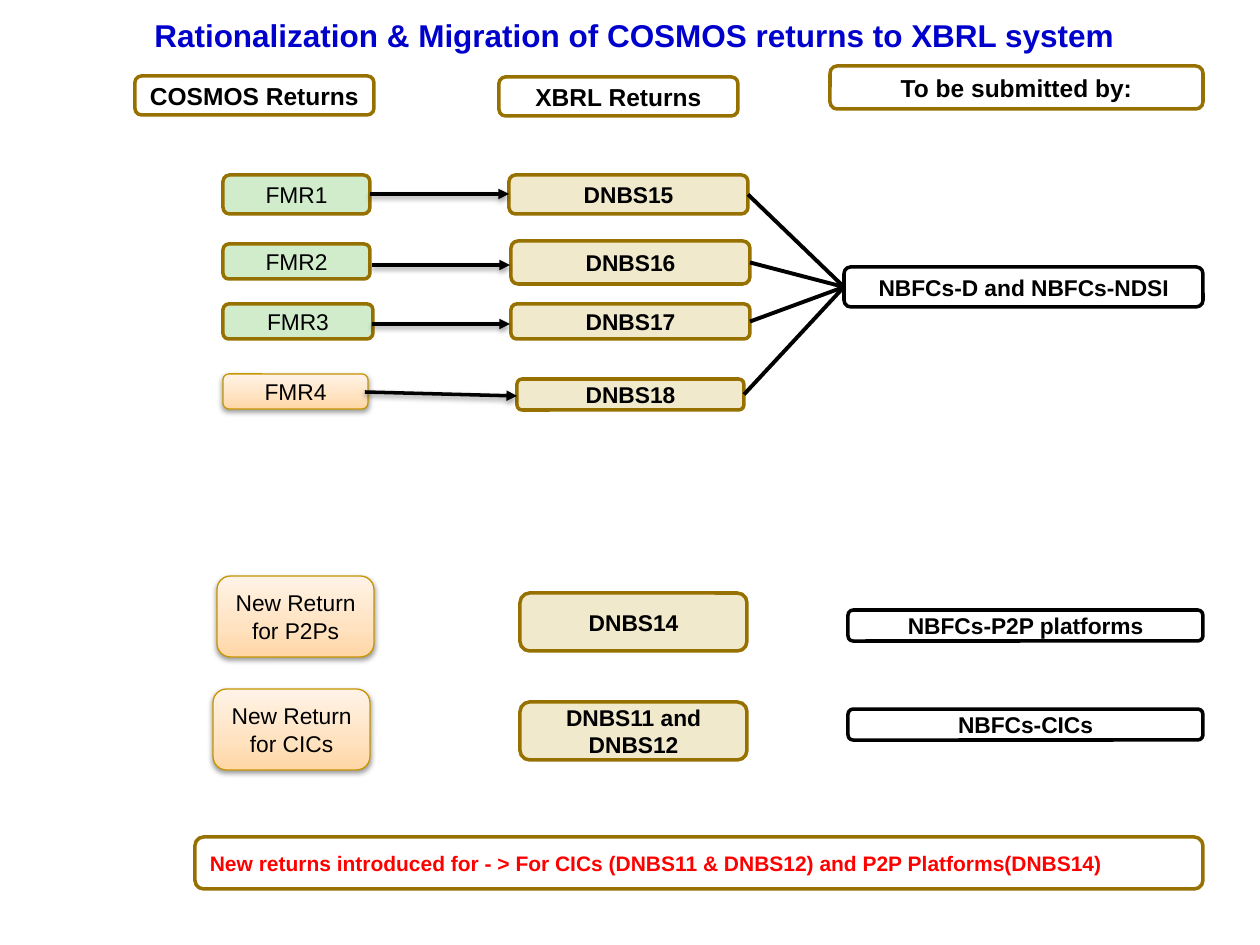
import pptx
import pptx.dml.color
import pptx.enum.shapes
import pptx.enum.text
import pptx.oxml
import pptx.oxml.ns
import pptx.util

RGB = pptx.dml.color.RGBColor
WHITE = RGB(0xFF, 0xFF, 0xFF)
BLACK = RGB(0x00, 0x00, 0x00)
RED = RGB(0xFF, 0x00, 0x00)
BLUE = RGB(0x00, 0x00, 0xCC)
GREEN = RGB(0xD0, 0xEC, 0xCB)
CREAM = RGB(0xF0, 0xE9, 0xCC)
BROWN = RGB(0x97, 0x71, 0x00)
GOLD = RGB(0xC8, 0x96, 0x00)
PEACH = RGB(0xFF, 0xD6, 0xA5)
LIGHT_PEACH = RGB(0xFF, 0xE2, 0xBF)
PALE_PEACH = RGB(0xFF, 0xF3, 0xE7)

EMU_PER_PX = 914400 / 126
CENTER = pptx.enum.text.PP_ALIGN.CENTER
LEFT = pptx.enum.text.PP_ALIGN.LEFT
DRAWING_NS = pptx.oxml.ns.nsdecls("a")


def px(*lengths):
    return [pptx.util.Emu(round(length * EMU_PER_PX)) for length in lengths]


def drawing_xml(markup):
    return pptx.oxml.parse_xml(markup.replace(">", f" {DRAWING_NS}>", 1))


def effects(shadowed):
    shadow = (
        '<a:outerShdw blurRad="39370" dist="20320" dir="5400000" rotWithShape="0">'
        f'<a:srgbClr val="{BLACK}"><a:alpha val="38000"/></a:srgbClr></a:outerShdw>'
    )
    return drawing_xml(f"<a:effectLst>{shadow if shadowed else ''}</a:effectLst>")


def peach_gradient():
    stops = "".join(
        f'<a:gs pos="{position * 1000}"><a:srgbClr val="{color}"/></a:gs>'
        for position, color in ((0, PEACH), (35, LIGHT_PEACH), (100, PALE_PEACH))
    )
    return drawing_xml(
        f'<a:gradFill><a:gsLst>{stops}</a:gsLst><a:lin ang="16200000" scaled="0"/></a:gradFill>'
    )


def write(frame, words, size, color, bold, align):
    frame.word_wrap = True
    frame.vertical_anchor = pptx.enum.text.MSO_ANCHOR.MIDDLE
    paragraph = frame.paragraphs[0]
    paragraph.alignment = align
    run = paragraph.add_run()
    run.text = words
    run.font.name = "Arial"
    run.font.size = pptx.util.Pt(size)
    run.font.bold = bold
    run.font.color.rgb = color


def card(slide, box, words, fill=WHITE, border=BROWN, size=13, color=BLACK, bold=True, align=CENTER):
    label = slide.shapes.add_shape(pptx.enum.shapes.MSO_SHAPE.ROUNDED_RECTANGLE, *px(*box))
    label.shadow.inherit = False
    label.fill.solid()
    label.fill.fore_color.rgb = fill
    label.line.color.rgb = border
    label.line.width = pptx.util.Pt(2)
    write(label.text_frame, words, size, color, bold, align)
    return label


def new_return_card(slide, box, words):
    label = card(slide, box, words, border=GOLD, bold=False)
    label.line.width = pptx.util.Pt(0.75)
    properties = label.element.spPr
    properties.replace(properties.find(pptx.oxml.ns.qn("a:solidFill")), peach_gradient())
    properties.replace(properties.find(pptx.oxml.ns.qn("a:effectLst")), effects(True))


def link(slide, start, end, arrow):
    straight = pptx.enum.shapes.MSO_CONNECTOR.STRAIGHT
    connector = slide.shapes.add_connector(straight, *px(*start, *end))
    connector.line.color.rgb = BLACK
    connector.line.width = pptx.util.Pt(2 if arrow else 2.25)
    if arrow:
        connector.line._get_or_add_ln().append(drawing_xml('<a:tailEnd type="triangle"></a:tailEnd>'))
    connector._element.spPr.append(effects(arrow))


def title(slide, box):
    heading = slide.shapes.add_textbox(*px(*box))
    write(heading.text_frame, "Rationalization & Migration of COSMOS returns to XBRL system",
          18, BLUE, True, CENTER)


def column_headings(slide, left, top):
    card(slide, (left, top + 10, 239, 39), "COSMOS Returns", size=14)
    card(slide, (left + 364, top + 11, 239, 39), "XBRL Returns", size=14)
    card(slide, (left + 695, top, 373, 43), "To be submitted by:", size=14)


def migrated_returns(slide, left, top):
    def at(x, y):
        return left + x, top + y

    cosmos = [("FMR1", 0, 147, 39), ("FMR2", 69, 147, 35), ("FMR3", 129, 150, 35)]
    for name, y, width, height in cosmos:
        card(slide, (*at(0, y), width, height), name, GREEN, bold=False)
    new_return_card(slide, (*at(0, 199), 145, 35), "FMR4")

    xbrl = [
        ("DNBS15", 286, 0, 239, 39),
        ("DNBS16", 288, 66, 239, 43),
        ("DNBS17", 288, 129, 239, 35),
        ("DNBS18", 294, 204, 227, 31),
    ]
    for name, x, y, width, height in xbrl:
        card(slide, (*at(x, y), width, height), name, CREAM)

    arrows = [(147, 19, 286, 19), (149, 90, 287, 90), (149, 149, 287, 149), (142, 217, 294, 221)]
    for x1, y1, x2, y2 in arrows:
        link(slide, at(x1, y1), at(x2, y2), True)

    for _, x, y, width, height in xbrl:
        link(slide, at(x + width, y + height / 2), at(621, 112), False)
    card(slide, (*at(621, 92), 359, 40), "NBFCs-D and NBFCs-NDSI", border=BLACK)


def new_return_row(slide, left, top, names, xbrl_offset, submitter_offset):
    cosmos, xbrl, submitter = names
    new_return_card(slide, (left, top, 157, 81), cosmos)
    xbrl_x, xbrl_y = xbrl_offset
    card(slide, (left + xbrl_x, top + xbrl_y, 227, 58), xbrl, CREAM)
    submitter_x, submitter_y = submitter_offset
    card(slide, (left + submitter_x, top + submitter_y, 355, 31), submitter, border=BLACK)


def summary(slide, box):
    card(slide, box,
         "New returns introduced for - > For CICs (DNBS11 & DNBS12) and P2P Platforms(DNBS14)",
         size=12, color=RED, align=LEFT)


def main():
    deck = pptx.Presentation()
    deck.slide_width, deck.slide_height = px(1260, 945)
    slide = deck.slides.add_slide(deck.slide_layouts[6])
    title(slide, (29, 9, 1211, 52))
    column_headings(slide, 135, 66)
    migrated_returns(slide, 223, 175)
    new_return_row(slide, 217, 576, ("New Return for P2Ps", "DNBS14", "NBFCs-P2P platforms"),
                   (303, 17), (631, 34))
    new_return_row(slide, 213, 689, ("New Return for CICs", "DNBS11 and DNBS12", "NBFCs-CICs"),
                   (307, 13), (635, 20))
    summary(slide, (195, 837, 1008, 52))
    deck.save("out.pptx")


if __name__ == "__main__":
    main()
